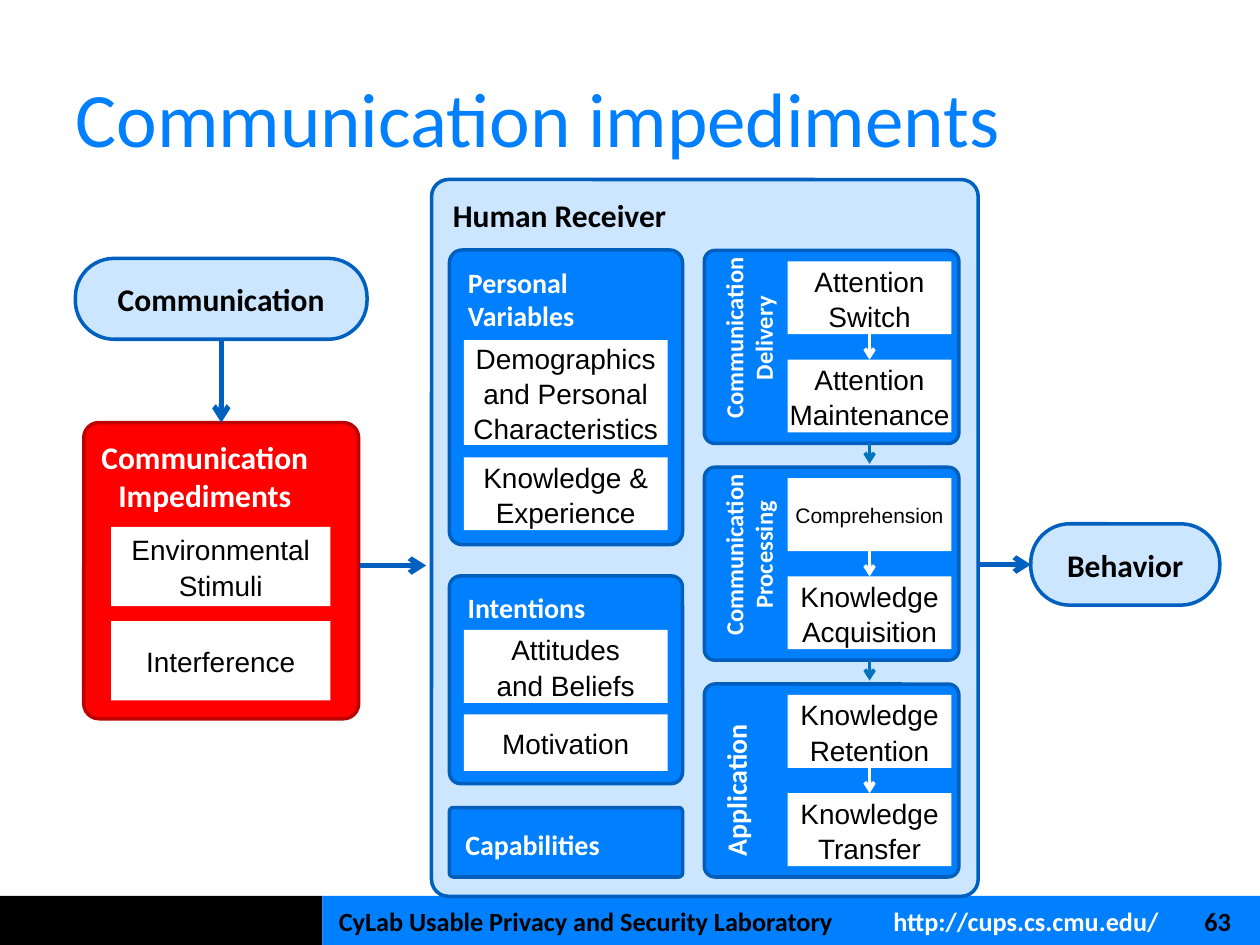
import copy

import pptx
import pptx.dml.color
import pptx.enum.shapes
import pptx.enum.text
import pptx.oxml
import pptx.oxml.ns
import pptx.util

Cm, Pt = pptx.util.Cm, pptx.util.Pt
RGB = pptx.dml.color.RGBColor.from_string
SHAPE = pptx.enum.shapes.MSO_SHAPE
ALIGN = pptx.enum.text.PP_ALIGN
ANCHOR = pptx.enum.text.MSO_ANCHOR
A_NS = pptx.oxml.ns.nsdecls("a")

COLORS = {
    "black": "000000", "white": "FFFFFF", "blue": "0080FF", "pale": "CCE6FF",
    "outline": "0060BF", "panel_line": "005FBD", "step": "0073BF",
    "red": "FF0000", "red_line": "BD0000",
}

prs = pptx.Presentation()
prs.slide_width, prs.slide_height = Cm(25.4), Cm(19.05)
s = prs.slides.add_slide(prs.slide_layouts[5])


def add_block(box, fill, line=None, adj=None, text="", size=16, font="Calibri", color="white",
              align=ALIGN.CENTER, anchor=ANCHOR.MIDDLE, insets=(0, 0, 0, 0), vert=None):
    """Add a rectangle, rounded if adj is given; insets are left, top, right, bottom in cm."""
    kind = SHAPE.RECTANGLE if adj is None else SHAPE.ROUNDED_RECTANGLE
    sp = s.shapes.add_shape(kind, *[Cm(v) for v in box])
    sp.shadow.inherit = False
    sp.fill.solid()
    sp.fill.fore_color.rgb = RGB(COLORS[fill])
    if adj is not None:
        sp.adjustments[0] = adj
    if line:
        sp.line.color.rgb = RGB(COLORS[line])
        sp.line.width = Pt(2)
    else:
        sp.line.fill.background()
    if not text:
        return sp
    tf = sp.text_frame
    tf.word_wrap = True
    tf.vertical_anchor = anchor
    tf.margin_left, tf.margin_top, tf.margin_right, tf.margin_bottom = [Cm(v) for v in insets]
    if vert:
        tf._txBody.bodyPr.set("vert", vert)
    p = tf.paragraphs[0]
    p.alignment = align
    if font == "Arial":
        p.line_spacing = 1.05
    for i, part in enumerate(text.split("\n")):
        if i:
            p.add_line_break()
            p._p[-1].append(copy.deepcopy(r.font._rPr))  # the break keeps the run's size
        r = p.add_run()
        r.text = part
        r.font.name, r.font.size = font, Pt(size)
        r.font.bold = font == "Calibri"
        r.font.color.rgb = RGB(COLORS[color])
    return sp


def add_arrow(x1, y1, x2, y2, color, width, begin=None, end=None):
    """Add an arrow; begin and end are optional (shape, side) pairs to join."""
    cx = s.shapes.add_connector(pptx.enum.shapes.MSO_CONNECTOR.STRAIGHT,
                                Cm(x1), Cm(y1), Cm(x2), Cm(y2))
    cx.line.color.rgb = RGB(COLORS[color])
    cx.line.width = Pt(width)
    cx.line._get_or_add_ln().append(pptx.oxml.parse_xml(f'<a:tailEnd {A_NS} type="arrow"/>'))
    cx._element.spPr.append(pptx.oxml.parse_xml(f"<a:effectLst {A_NS}/>"))
    if begin:
        cx.begin_connect(*begin)
    if end:
        cx.end_connect(*end)


# Footer
add_block((0, 18.06, 6.5, 0.99), "black")
add_block((6.5, 18.06, 18.9, 0.99), "blue")
tf = s.shapes.add_textbox(Cm(6.83), Cm(18.24), Cm(18.4), Cm(0.65)).text_frame
tf.word_wrap = True
tf.margin_left = tf.margin_top = tf.margin_right = tf.margin_bottom = 0
p = tf.paragraphs[0]
tabs = "".join(f'<a:tab pos="{Cm(x)}" algn="l"/>' for x in (11.18, 17.45))
p._p.get_or_add_pPr().append(pptx.oxml.parse_xml(f"<a:tabLst {A_NS}>{tabs}</a:tabLst>"))
for text, color in [("CyLab Usable Privacy and Security Laboratory\t", "black"),
                    ("http://cups.cs.cmu.edu/\t", "white"), ("63", "black")]:
    r = p.add_run()
    r.text = text
    r.font.name, r.font.size, r.font.bold = "Calibri", Pt(15), True
    r.font.color.rgb = RGB(COLORS[color])

# Title
title = s.shapes.title
title.left, title.top, title.width, title.height = Cm(1.27), Cm(0.76), Cm(22.86), Cm(3.18)
tf = title.text_frame
tf.vertical_anchor = ANCHOR.MIDDLE
p = tf.paragraphs[0]
p.alignment = ALIGN.LEFT
r = p.add_run()
r.text = "Communication impediments"
r.font.name, r.font.size = "Calibri", Pt(44)
r.font.color.rgb = RGB(COLORS["blue"])

# Human receiver and its left-hand panels
add_block((8.7, 3.62, 11.02, 14.45), "pale", "outline", 0.031, "Human Receiver", 18,
          color="black", align=ALIGN.LEFT, anchor=ANCHOR.TOP, insets=(0.33, 0.23, 0, 0))
for top, height, text, anchor, inset in [
        (5.04, 5.94, "Personal\nVariables", ANCHOR.TOP, 0.23),
        (11.61, 4.19, "Intentions", ANCHOR.TOP, 0.23),
        (16.28, 1.4, "Capabilities", ANCHOR.MIDDLE, 0.1)]:
    add_block((9.06, top, 4.7, height), "blue", "panel_line", 0.055, text,
              align=ALIGN.LEFT, anchor=anchor, insets=(0.3, inset, 0, 0))

# Communication, impediments and behavior
communication = add_block((1.52, 5.21, 5.88, 1.63), "pale", "outline", 0.479,
                          "Communication", 18, color="black")
impediments = add_block((1.69, 8.52, 5.54, 5.97), "red", "red_line", 0.055,
                        "Communication\nImpediments", 18, anchor=ANCHOR.TOP,
                        insets=(0, 0.23, 0.66, 0))
behavior = add_block((20.78, 10.56, 3.81, 1.64), "pale", "outline", 0.479,
                     "Behavior", 18, color="black")

# White boxes on the left-hand panels
for left, top, width, height, text in [
        (9.35, 6.86, 4.11, 2.11, "Demographics\nand Personal\nCharacteristics"),
        (9.35, 9.22, 4.11, 1.47, "Knowledge &\nExperience"),
        (9.35, 12.7, 4.11, 1.47, "Attitudes\nand Beliefs"),
        (9.35, 14.4, 4.11, 1.14, "Motivation"),
        (2.24, 10.62, 4.42, 1.6, "Environmental\nStimuli"),
        (2.24, 12.52, 4.42, 1.6, "Interference")]:
    add_block((left, top, width, height), "white", text=text, font="Arial", color="black")

# Processing stages, each with two steps
stages = [
    ("Communication\nDelivery", 14, ALIGN.CENTER, ("Attention\nSwitch", 16), "Attention\nMaintenance"),
    ("Communication\nProcessing", 14, ALIGN.CENTER, ("Comprehension", 12), "Knowledge\nAcquisition"),
    ("Application", 16, ALIGN.LEFT, ("Knowledge\nRetention", 16), "Knowledge\nTransfer"),
]
STAGE_HEIGHT, STAGE_PITCH, STEP_X = 3.89, 4.37, 17.53
for i, (name, size, align, (first, first_size), second) in enumerate(stages):
    top = 5.05 + i * STAGE_PITCH
    add_block((14.2, top, 5.13, STAGE_HEIGHT), "blue", "panel_line", 0.055, name, size,
              align=align, anchor=ANCHOR.TOP, insets=(0.23, 0, 0, 0.35), vert="vert270")
    steps = [add_block((15.88, top + dy, 3.3, 1.47), "white", text=text, size=pt,
                       font="Arial", color="black")
             for dy, text, pt in [(0.22, first, first_size), (2.2, second, 16)]]
    add_arrow(STEP_X, top + 1.69, STEP_X, top + 2.2, "white", 2, (steps[0], 2), (steps[1], 0))
    if i < len(stages) - 1:
        add_arrow(STEP_X, top + STAGE_HEIGHT, STEP_X, top + STAGE_PITCH - 0.07, "step", 2)

# Flow between the main blocks
add_arrow(4.46, 6.84, 4.46, 8.52, "outline", 3, (communication, 2), (impediments, 0))
add_arrow(7.26, 11.4, 8.59, 11.4, "outline", 3)
add_arrow(19.74, 11.38, 20.78, 11.38, "outline", 3, end=(behavior, 1))

prs.save("out.pptx")
